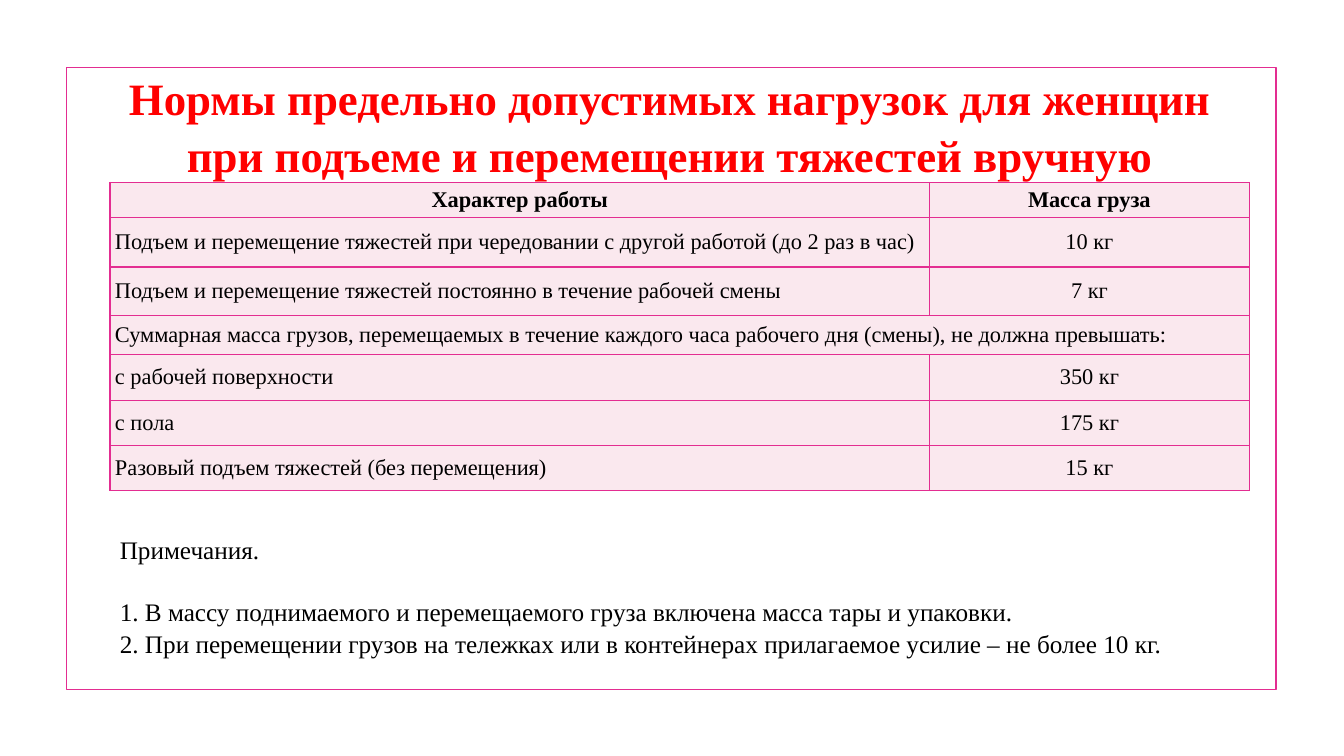
from lxml.etree import SubElement
from pptx import Presentation
from pptx.dml.color import RGBColor
from pptx.enum.shapes import MSO_CONNECTOR as Connector, MSO_SHAPE as Shape
from pptx.enum.text import MSO_ANCHOR as Anchor, PP_ALIGN as Align
from pptx.oxml.ns import qn
from pptx.util import Inches, Pt

FONT = "Times New Roman"
PINK = "E32D91"
PALE = "FAE8EE"
BLACK = "000000"
RED = "FF0000"

TITLE = "Нормы предельно допустимых нагрузок для женщин при подъеме и перемещении тяжестей вручную"
COLUMN_WIDTHS = [8.13, 3.17]
ROW_HEIGHTS = [0.35, 0.49, 0.48, 0.39, 0.45, 0.45, 0.45]
LOADS = [
    ("Характер работы", "Масса груза"),
    ("Подъем и перемещение тяжестей при чередовании с другой работой (до 2 раз в час)", "10 кг"),
    ("Подъем и перемещение тяжестей постоянно в течение рабочей смены", "7 кг"),
    ("Суммарная масса грузов, перемещаемых в течение каждого часа рабочего дня (смены), "
     "не должна превышать:", None),
    ("с рабочей поверхности", "350 кг"),
    ("с пола", "175 кг"),
    ("Разовый подъем тяжестей (без перемещения)", "15 кг"),
]
NOTES = [
    "Примечания.",
    "1. В массу поднимаемого и перемещаемого груза включена масса тары и упаковки.",
    "2. При перемещении грузов на тележках или в контейнерах прилагаемое усилие – не более 10 кг.",
]


def color(value):
    """Turn a hex string into a colour."""
    return RGBColor.from_string(value)


def inches(box):
    """Turn a box of numbers into lengths."""
    return [Inches(value) for value in box]


def style(para, size, ink=BLACK, bold=False, align=Align.LEFT):
    """Format a paragraph and its runs."""
    para.alignment = align
    for span in para.runs:
        span.font.name = FONT
        span.font.size = Pt(size)
        span.font.bold = bold
        span.font.color.rgb = color(ink)


def add_frame(slide, box):
    """Draw the outlined frame and the rule across it."""
    frame = slide.shapes.add_shape(Shape.RECTANGLE, *inches(box))
    frame.shadow.inherit = False
    frame.fill.background()
    left, top, width, _ = box
    rule = slide.shapes.add_connector(
        Connector.STRAIGHT,
        *inches((left + 0.87, top + 1.98, left + width - 0.85, top + 1.98)))
    SubElement(rule._element.spPr, qn("a:effectLst"))
    for item in (frame, rule):
        item.line.color.rgb = color(PINK)
        item.line.width = Pt(1.25)


def add_text(slide, box, lines, anchor=Anchor.TOP):
    """Place a wrapped text box and return its paragraphs."""
    frame = slide.shapes.add_textbox(*inches(box)).text_frame
    frame.word_wrap = True
    frame.vertical_anchor = anchor
    frame.text = "\n".join(lines)
    for para in frame.paragraphs:
        para.line_spacing = 1.05
    return frame.paragraphs


def add_title(slide, box):
    """Write the centred title."""
    for para in add_text(slide, box, [TITLE], Anchor.MIDDLE):
        style(para, 32, RED, True, Align.CENTER)


def add_notes(slide, box):
    """Write the notes with a gap below their heading."""
    paragraphs = add_text(slide, box, NOTES)
    for para in paragraphs:
        style(para, 18)
    paragraphs[1].space_before = Pt(21.5)


def style_cell(cell):
    """Fill a cell, set its margins and draw its borders."""
    cell.vertical_anchor = Anchor.MIDDLE
    cell.margin_left = cell.margin_right = Inches(0.05)
    cell.margin_top = cell.margin_bottom = Inches(0.04)
    properties = cell._tc.get_or_add_tcPr()
    for side in ("lnL", "lnR", "lnT", "lnB"):
        border = SubElement(properties, qn(f"a:{side}"), w=str(Pt(1)))
        SubElement(SubElement(border, qn("a:solidFill")), qn("a:srgbClr"), val=PINK)
    cell.fill.solid()
    cell.fill.fore_color.rgb = color(PALE)


def add_loads(slide, box):
    """Build the table of load limits."""
    table = slide.shapes.add_table(len(LOADS), len(COLUMN_WIDTHS), *inches(box)).table
    table.first_row = table.horz_banding = False
    for column, width in zip(table.columns, COLUMN_WIDTHS):
        column.width = Inches(width)
    for row, height in zip(table.rows, ROW_HEIGHTS):
        row.height = Inches(height)
    for row, texts in enumerate(LOADS):
        for column, text in enumerate(texts):
            cell = table.cell(row, column)
            style_cell(cell)
            if text is None:
                table.cell(row, 0).merge(cell)
                continue
            cell.text = text
            header = row == 0
            align = Align.CENTER if header or column else Align.LEFT
            style(cell.text_frame.paragraphs[0], 16, bold=header, align=align)


def main():
    """Build and save the deck."""
    deck = Presentation()
    deck.slide_width, deck.slide_height = Inches(13.33), Inches(7.5)
    slide = deck.slides.add_slide(deck.slide_layouts[6])
    add_frame(slide, (0.66, 0.67, 12, 6.17))
    add_title(slide, (0.81, 0.66, 11.67, 1.16))
    add_loads(slide, (1.09, 1.81, 11.3, 3.07))
    add_notes(slide, (1.09, 5.24, 11.3, 1.31))
    deck.save("out.pptx")


if __name__ == "__main__":
    main()
